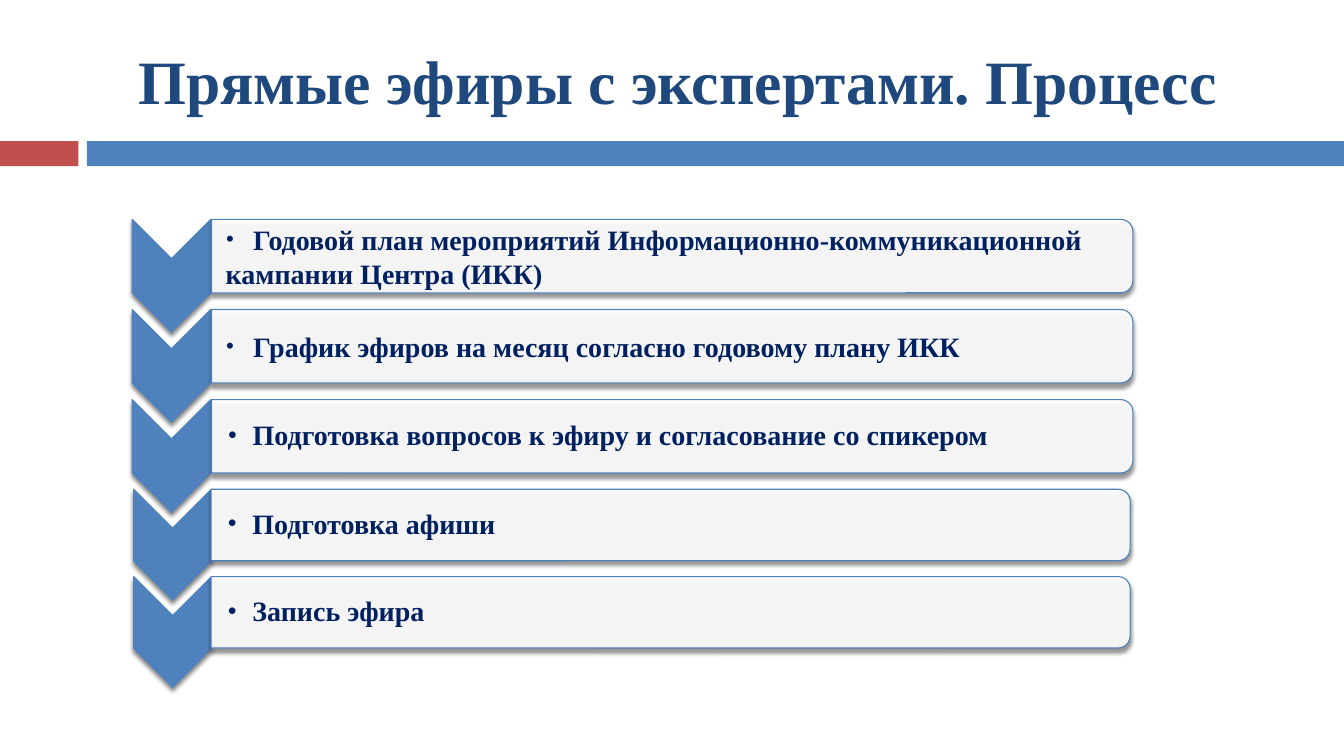
"""Build the slide that shows the live broadcast process as five chevron steps."""
import dataclasses

import lxml.etree
import pptx
import pptx.dml.color
import pptx.enum.shapes
import pptx.enum.text
import pptx.oxml
import pptx.oxml.ns
import pptx.util

Cm = pptx.util.Cm
Pt = pptx.util.Pt
ShapeKind = pptx.enum.shapes.MSO_SHAPE


@dataclasses.dataclass(frozen=True)
class Theme:
    """Colours, font and type sizes of the slide."""
    font: str = "Times New Roman"
    title: str = "1F497D"
    text: str = "002060"
    blue: str = "4F81BD"
    red: str = "C0504D"
    panel: str = "FFFFFF"
    shadow: str = "000000"
    title_size: int = 44
    step_size: int = 20
    outline: float = 0.79


@dataclasses.dataclass(frozen=True)
class TextStyle:
    """Paragraph layout of a step, lengths in centimetres."""
    inset: float
    hanging: float = 0
    tab: float = 0
    bullet_percent: int = 100
    line_spacing: float = 1
    space_after: int = 0


@dataclasses.dataclass(frozen=True)
class StepGroup:
    """Evenly spaced steps that share one size, lengths in centimetres."""
    top: float
    pitch: float
    chevron_left: float
    chevron_width: float
    chevron_height: float
    panel_left: float
    panel_width: float
    panel_height: float
    steps: tuple[tuple[str, TextStyle], ...]


THEME = Theme()
TABBED = TextStyle(inset=0.36, tab=0.69, bullet_percent=90)
HANGING = TextStyle(inset=0.41, hanging=0.63, line_spacing=0.9, space_after=3)
GROUPS = (
    StepGroup(5.53, 2.27, 3.33, 1.98, 2.84, 5.33, 23.22, 1.85, (
        ("Годовой план мероприятий Информационно-коммуникационной кампании Центра (ИКК)", TABBED),
        ("График эфиров на месяц согласно годовому плану ИКК", TABBED),
        ("Подготовка вопросов к эфиру и согласование со спикером", HANGING),
    )),
    StepGroup(12.33, 2.2, 3.37, 1.96, 2.79, 5.32, 23.16, 1.8, (
        ("Подготовка афиши", HANGING),
        ("Запись эфира", HANGING),
    )),
)


def rgb(value: str) -> pptx.dml.color.RGBColor:
    """Return the colour for a hexadecimal value."""
    return pptx.dml.color.RGBColor.from_string(value)


def add_element(parent, tag: str, **attributes: str):
    """Append a DrawingML element and return it."""
    child = lxml.etree.SubElement(parent, pptx.oxml.ns.qn(tag))
    for name, value in attributes.items():
        child.set(name, value)
    return child


def add_bar(slide, left: float, width: float, color: str) -> None:
    """Draw one part of the band under the title."""
    shape = slide.shapes.add_shape(ShapeKind.RECTANGLE, Cm(left), Cm(3.56), Cm(width), Cm(0.63))
    shape.shadow.inherit = False
    shape.fill.solid()
    shape.fill.fore_color.rgb = rgb(color)
    shape.line.fill.background()


def add_turned_shape(slide, kind, left: float, top: float, width: float, height: float,
                     color: str, opacity: int = 100):
    """Draw a shadowed shape, turned a quarter, that covers the given area."""
    shift = (width - height) / 2
    shape = slide.shapes.add_shape(
        kind, Cm(left + shift), Cm(top - shift), Cm(height), Cm(width))
    shape.rotation = 90
    shape.fill.solid()
    shape.fill.fore_color.rgb = rgb(color)
    properties = shape._element.spPr
    if opacity < 100:
        fill_color = properties.find(".//" + pptx.oxml.ns.qn("a:srgbClr"))
        add_element(fill_color, "a:alpha", val=str(opacity * 1000))
    shape.line.color.rgb = rgb(THEME.blue)
    shape.line.width = Pt(THEME.outline)
    shape.shadow.inherit = False
    effects = properties.find(pptx.oxml.ns.qn("a:effectLst"))
    shadow = add_element(effects, "a:outerShdw", blurRad=str(Pt(3)), dist=str(Pt(2.4)),
                         dir="5400000", rotWithShape="0")
    shadow_color = add_element(shadow, "a:srgbClr", val=THEME.shadow)
    add_element(shadow_color, "a:alpha", val="45000")


def add_text(slide, left: float, top: float, width: float, height: float,
             size: int, color: str):
    """Add a wrapped, middle-anchored box and return its frame and paragraph."""
    frame = slide.shapes.add_textbox(Cm(left), Cm(top), Cm(width), Cm(height)).text_frame
    frame.word_wrap = True
    frame.vertical_anchor = pptx.enum.text.MSO_ANCHOR.MIDDLE
    paragraph = frame.paragraphs[0]

    def style_font() -> None:
        """Set the font of the paragraph."""
        paragraph.font.name = THEME.font
        paragraph.font.size = Pt(size)
        paragraph.font.bold = True
        paragraph.font.color.rgb = rgb(color)

    return frame, paragraph, style_font


def add_step_text(slide, group: StepGroup, top: float, text: str, style: TextStyle) -> None:
    """Write the bulleted text of one step on its panel."""
    frame, paragraph, style_font = add_text(
        slide, group.panel_left, top, group.panel_width - 0.1, group.panel_height,
        THEME.step_size, THEME.text)
    frame.margin_left = Cm(style.inset)
    frame.margin_right = frame.margin_top = frame.margin_bottom = Cm(0.03)
    paragraph.line_spacing = style.line_spacing
    paragraph.space_after = Pt(style.space_after)
    properties = paragraph._p.get_or_add_pPr()
    properties.set("marL", str(Cm(style.hanging)))
    properties.set("indent", str(-Cm(style.hanging)))
    add_element(properties, "a:buSzPct", val=str(style.bullet_percent * 1000))
    add_element(properties, "a:buFont", typeface=THEME.font)
    add_element(properties, "a:buChar", char="•")
    if style.tab:
        tabs = add_element(properties, "a:tabLst")
        add_element(tabs, "a:tab", pos=str(Cm(style.tab)), algn="l")
    style_font()
    paragraph.add_run().text = "\t" + text if style.tab else text


def add_group(slide, group: StepGroup) -> None:
    """Draw every step of a group."""
    for index, (text, style) in enumerate(group.steps):
        top = group.top + index * group.pitch
        add_turned_shape(slide, ShapeKind.CHEVRON, group.chevron_left, top,
                         group.chevron_width, group.chevron_height, THEME.blue)
        add_turned_shape(slide, ShapeKind.ROUND_2_SAME_RECTANGLE, group.panel_left, top,
                         group.panel_width, group.panel_height, THEME.panel, opacity=90)
        add_step_text(slide, group, top, text, style)


def main() -> None:
    """Build and save the presentation."""
    presentation = pptx.Presentation()
    presentation.slide_width = Cm(33.87)
    presentation.slide_height = Cm(19.05)
    slide = presentation.slides.add_slide(presentation.slide_layouts[6])
    add_bar(slide, 0, 1.98, THEME.red)
    add_bar(slide, 2.19, 31.68, THEME.blue)
    _, title, style_font = add_text(
        slide, 2.26, 0.64, 29.67, 2.74, THEME.title_size, THEME.title)
    title.alignment = pptx.enum.text.PP_ALIGN.CENTER
    style_font()
    title.add_run().text = "Прямые эфиры с экспертами. Процесс"
    for group in GROUPS:
        add_group(slide, group)
    presentation.save("out.pptx")


if __name__ == "__main__":
    main()
